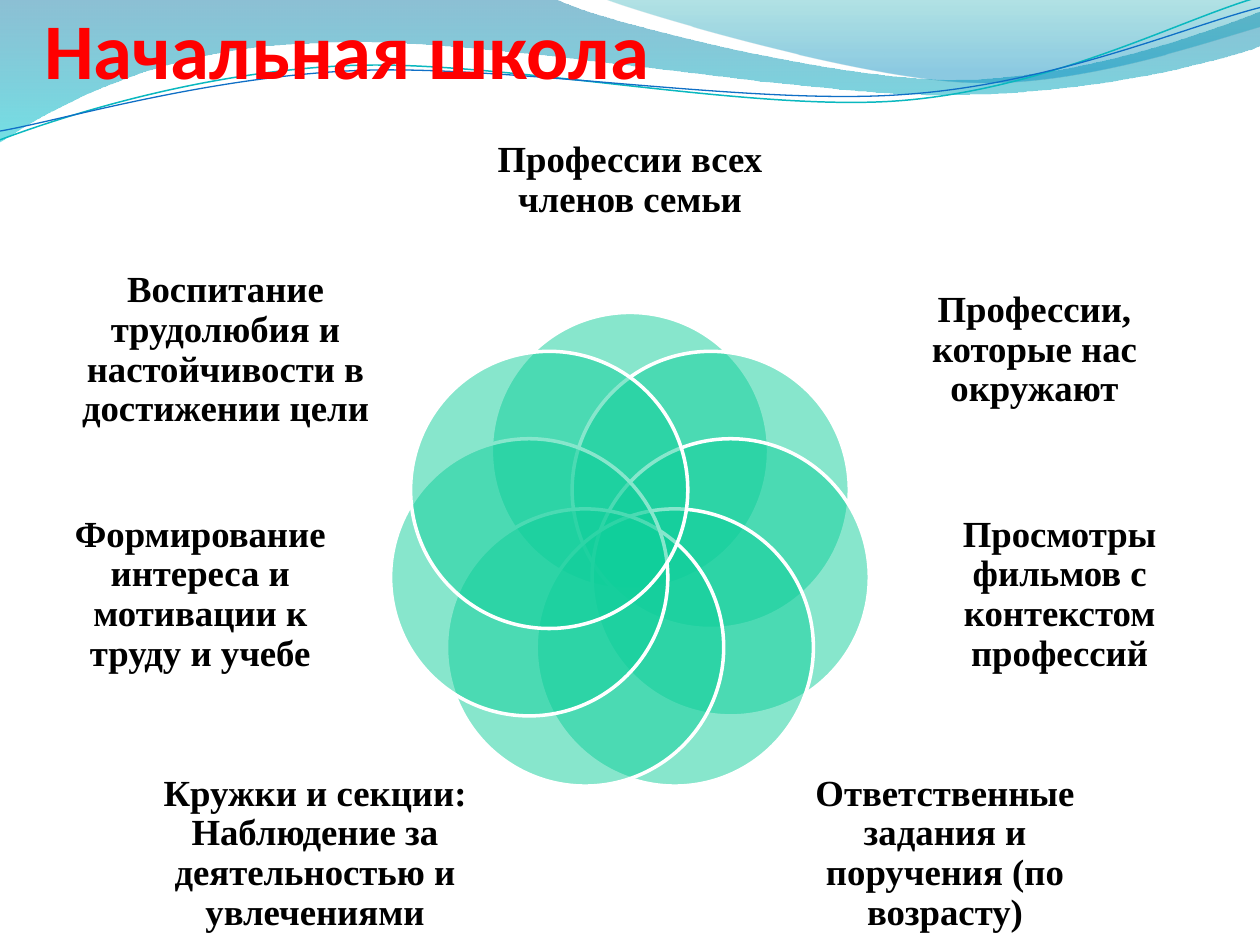
from math import cos, pi, radians, sin

from lxml.etree import SubElement
from pptx import Presentation
from pptx.dml.color import RGBColor
from pptx.enum.shapes import MSO_SHAPE as Shape
from pptx.enum.text import MSO_ANCHOR as Anchor, PP_ALIGN as Align
from pptx.oxml.ns import qn
from pptx.util import Inches, Pt


def paint(color, code):
    color.rgb = RGBColor.from_string(code)


def add_text(shapes, left, top, width, height, text, font, size, code):
    box = shapes.add_textbox(*[round(n * cell) for n in (left, top, width, height)])
    frame = box.text_frame
    frame.word_wrap = True
    frame.margin_left = frame.margin_right = frame.margin_top = frame.margin_bottom = 0
    para = frame.paragraphs[0]
    para.text = text
    para.font.name, para.font.size, para.font.bold = font, Pt(size), True
    paint(para.font.color, code)
    return frame, para


deck = Presentation()
deck.slide_width, deck.slide_height = Inches(10), Inches(7.5)
cell = deck.slide_width / 10
page = deck.slides.add_slide(deck.slide_layouts[6])

upper_wave = [
    (0, 0), (4.4, -0.01),
    (4.76, 0.17, 6.64, 0.63, 7.58, 0.63), (8.53, 0.63, 9.58, 0.26, 10, 0.09),
    (10.01, 0.36),
    (9.83, 0.44, 8.7, 0.76, 7.46, 0.75), (6.22, 0.75, 3.82, 0.28, 2.57, 0.34),
    (1.29, 0.36, 0.46, 0.83, -0.01, 1.13), (0, 0),
]
right_wave = [
    (4.79, -0.01),
    (5.09, 0.11, 6.82, 0.62, 7.69, 0.65), (8.56, 0.69, 9.61, 0.32, 10, 0.21),
    (10, 0), (4.79, -0.01),
]
teal_strand = [
    (0, 1.11),
    (0.48, 0.93, 1.58, 0.57, 2.77, 0.52), (3.95, 0.47, 5.93, 0.89, 7.13, 0.8),
    (8.33, 0.71, 9.38, 0.15, 9.98, -0.02),
]
blue_strand = [
    (0, 1.04),
    (0.47, 0.96, 1.64, 0.61, 2.83, 0.56), (4.03, 0.51, 5.97, 0.84, 7.17, 0.75),
    (8.36, 0.67, 9.41, 0.21, 10, 0.06),
]
strands = page.shapes.add_group_shape()
ribbons = [
    (page, upper_wave, [(0, "0074A1", 45), (1, "00C6CF", 55)], None),
    (page, right_wave, [(0, "00A1A9", 30), (0.8, "008BBF", 45)], None),
    (strands, teal_strand, None, ("0AB8BF", 0.85)),
    (strands, blue_strand, None, ("0F6FC6", 0.75)),
]
tilt, pivot_x, pivot_y = 2.7, 4.99, 0.58
for parent, segments, stops, stroke in ribbons:
    points = [pair for segment in segments for pair in zip(segment[::2], segment[1::2])]
    turn = radians(tilt) if stroke else 0
    points = [(
        (pivot_x + (x - pivot_x) * cos(turn) - (y - pivot_y) * sin(turn)) * cell,
        (pivot_y + (x - pivot_x) * sin(turn) + (y - pivot_y) * cos(turn)) * cell,
    ) for x, y in points]
    builder = parent.shapes.build_freeform(*points[0])
    builder.add_line_segments(points[1:], close=stops is not None)
    ribbon = builder.convert_to_shape()
    ribbon.shadow.inherit = False

    lines = iter(list(ribbon._element.iter(qn("a:lnTo"))))
    for segment in segments[1:]:
        line = next(lines)
        if len(segment) == 6:
            line.addprevious(curve := line.makeelement(qn("a:cubicBezTo")))
            for corner in (line, next(lines), next(lines)):
                curve.append(corner[0])
                corner.getparent().remove(corner)

    if stops:
        ribbon.line.fill.background()
        ribbon.fill.gradient()
        ribbon.fill.gradient_angle = 270
        for stop, (position, code, opacity) in zip(ribbon.fill.gradient_stops, stops):
            stop.position = position
            paint(stop.color, code)
        for node, (position, code, opacity) in zip(ribbon._element.iter(qn("a:srgbClr")), stops):
            SubElement(node, qn("a:alpha")).set("val", str(opacity * 1000))
    else:
        ribbon.fill.background()
        ribbon.rotation = 360 - tilt
        code, weight = stroke
        paint(ribbon.line.color, code)
        ribbon.line.width = Pt(weight)
page.shapes._spTree.append(strands._element)

frame, para = add_text(page.shapes, 0.35, 0.03, 9, 0.73, "Начальная школа", "Calibri", 45, "FF0000")
frame.margin_top = round(0.05 * cell)
frame.vertical_anchor = Anchor.BOTTOM

petals = [
    ("Профессии всех членов семьи", 0, 0.76, 2.52, 1.35),
    ("Профессии, которые нас окружают", 3.21, 2.04, 2.38, 1.48),
    ("Просмотры фильмов с контекстом профессий", 3.41, 3.93, 2.34, 1.58),
    ("Ответственные задания и поручения (по возрасту)", 2.5, 6.05, 2.52, 1.45),
    ("Кружки и секции: Наблюдение за деятельностью и увлечениями", -2.5, 6.05, 2.52, 1.45),
    ("Формирование интереса и мотивации к труду и учебе", -3.41, 3.93, 2.34, 1.58),
    ("Воспитание трудолюбия и настойчивости в достижении цели", -3.21, 2.04, 2.38, 1.48),
]
center_x, center_y, orbit, diameter = 5, 4.4, 0.82, 2.2
flower = page.shapes.add_group_shape()
for index, (text, offset, top, width, height) in enumerate(petals):
    angle = 2 * pi * index / len(petals)
    left = center_x + orbit * sin(angle) - diameter / 2
    upper = center_y - orbit * cos(angle) - diameter / 2
    petal = flower.shapes.add_shape(
        Shape.OVAL, *[round(n * cell) for n in (left, upper, diameter, diameter)])
    petal.shadow.inherit = False
    petal.fill.solid()
    paint(petal.fill.fore_color, "10CF9B")
    tint = next(petal._element.iter(qn("a:srgbClr")))
    SubElement(tint, qn("a:alpha")).set("val", "50000")
    paint(petal.line.color, "FFFFFF")
    petal.line.width = Pt(2)

    frame, para = add_text(flower.shapes, center_x + offset - width / 2, top, width, height,
                           text, "Times New Roman", 21, "000000")
    frame.vertical_anchor = Anchor.MIDDLE
    para.alignment = Align.CENTER
    para.line_spacing = 0.9

deck.save("out.pptx")
